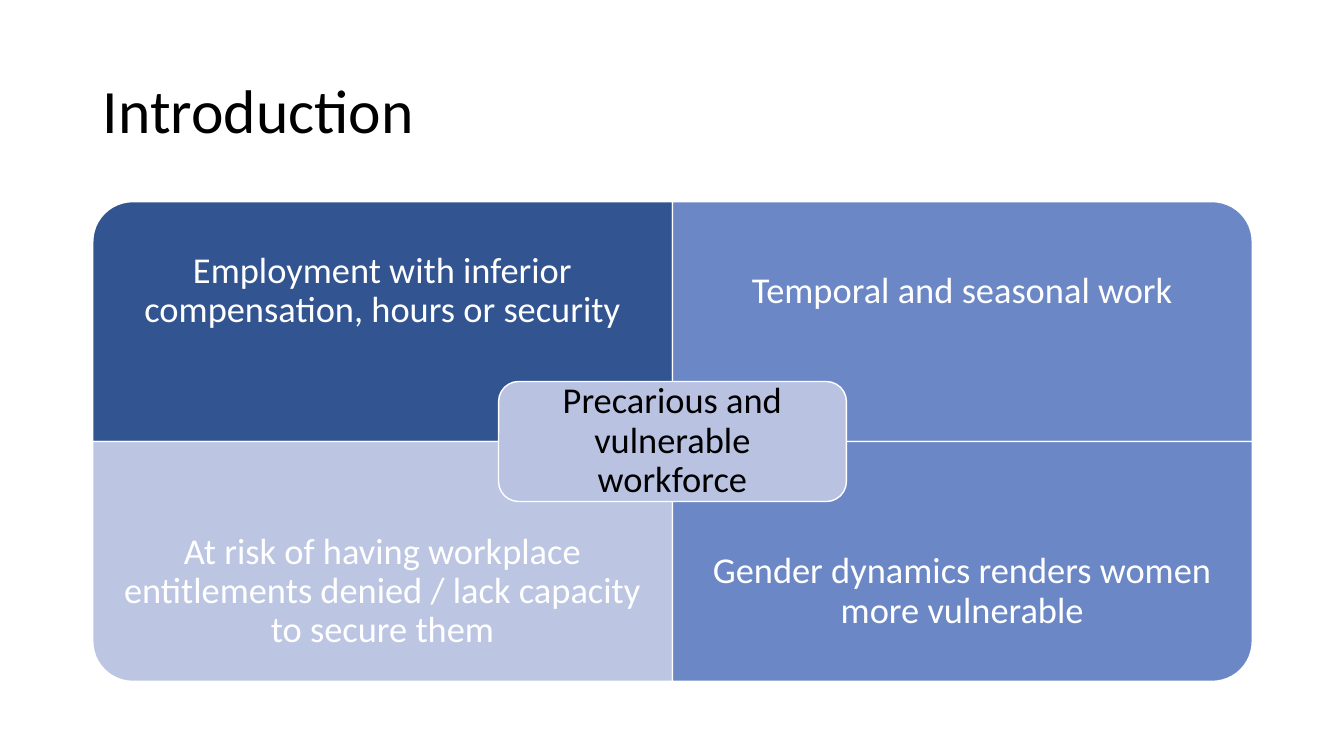
from pptx import Presentation
from pptx.dml.color import RGBColor
from pptx.enum import shapes, text
from pptx.util import Inches, Pt


def add_panel(kind, left, top, width, height, color):
    sp = s.shapes.add_shape(kind, Inches(left), Inches(top), Inches(width), Inches(height))
    sp.shadow.inherit = False
    sp.fill.solid()
    sp.fill.fore_color.rgb = RGBColor.from_string(color)
    sp.line.color.rgb = RGBColor.from_string("FFFFFF")
    sp.line.width = Pt(1)
    return sp


def write(sp, words, size, color, align, inset):
    tf = sp.text_frame
    tf.text = words
    tf.word_wrap = True
    tf.auto_size = text.MSO_AUTO_SIZE.NONE
    tf.vertical_anchor = text.MSO_ANCHOR.MIDDLE
    tf.margin_left = tf.margin_right = Inches(inset)
    tf.margin_top = tf.margin_bottom = Inches(inset)
    p = tf.paragraphs[0]
    p.alignment = align
    p.line_spacing = 0.9
    p.font.size = Pt(size)
    p.font.name = "Calibri"
    p.font.color.rgb = RGBColor.from_string(color)


prs = Presentation()
prs.slide_width, prs.slide_height = Inches(13.33), Inches(7.5)
s = prs.slides.add_slide(prs.slide_layouts[5])

title = s.shapes.title
title.left, title.top = Inches(0.92), Inches(0.4)
title.width, title.height = Inches(11.5), Inches(1.45)
write(title, "Introduction", 44, "000000", text.PP_ALIGN.LEFT, 0.1)

left, top = 0.92, 2
quad_w, quad_h, label_h = 5.75, 2.38, 1.78
quadrants = [
    ("Employment with inferior compensation, hours or security", "325491", 270),
    ("Temporal and seasonal work", "6C87C5", 0),
    ("At risk of having workplace entitlements denied / lack capacity to secure them", "BCC6E2", 180),
    ("Gender dynamics renders women more vulnerable", "6C87C5", 90),
]
for i, (words, color, rotation) in enumerate(quadrants):
    row, col = divmod(i, 2)
    x, y = left + col * quad_w, top + row * quad_h
    w, h = (quad_h, quad_w) if rotation % 180 else (quad_w, quad_h)
    sp = add_panel(shapes.MSO_SHAPE.ROUND_1_RECTANGLE,
                   x + (quad_w - w) / 2, y + (quad_h - h) / 2, w, h, color)
    sp.rotation = rotation
    label_y = y + row * (quad_h - label_h)
    label = s.shapes.add_textbox(Inches(x), Inches(label_y), Inches(quad_w), Inches(label_h))
    write(label, words, 26, "FFFFFF", text.PP_ALIGN.CENTER, 0.2)

core_w, core_h = 3.45, 1.19
core = add_panel(shapes.MSO_SHAPE.ROUNDED_RECTANGLE,
                 left + quad_w - core_w / 2, top + quad_h - core_h / 2, core_w, core_h, "B9C2E1")
write(core, "Precarious and vulnerable workforce", 26, "000000", text.PP_ALIGN.CENTER, 0.11)

prs.save("out.pptx")
